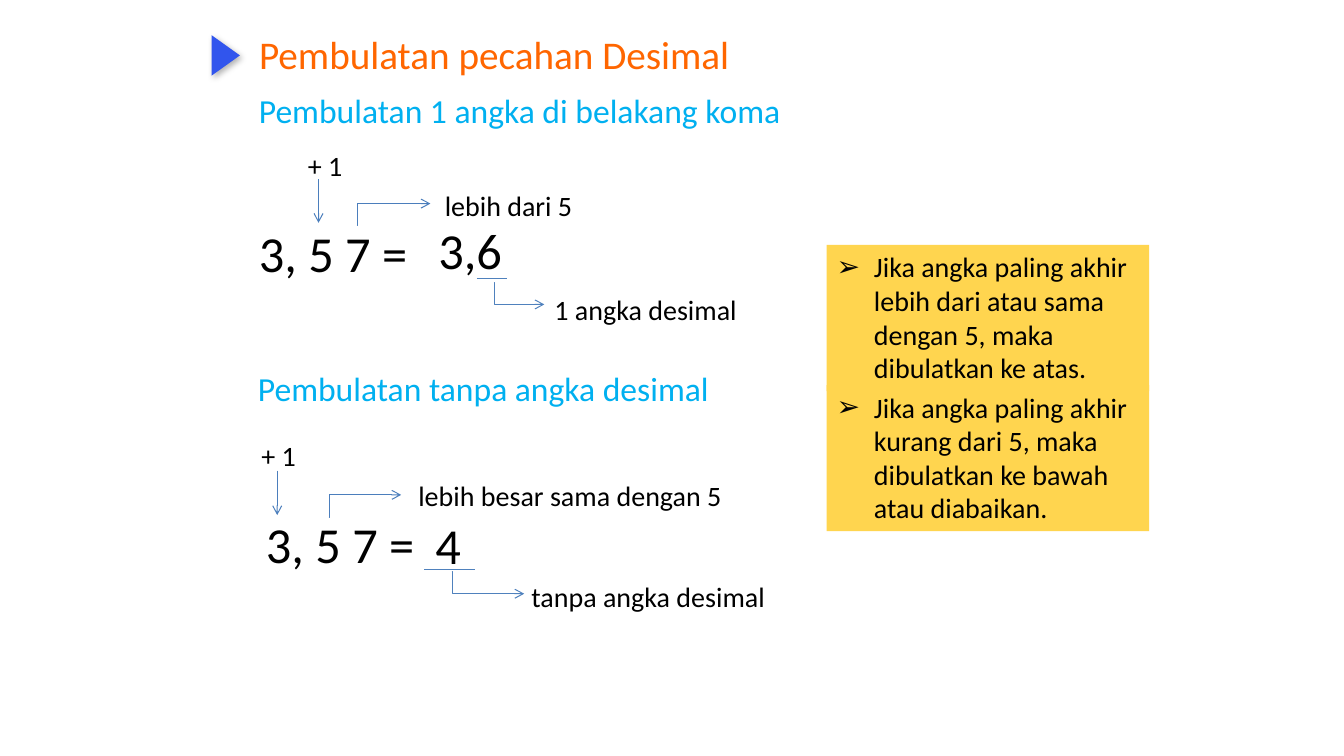
from dataclasses import dataclass
from lxml import etree
from pptx import Presentation
from pptx import util as u
from pptx.dml.color import RGBColor
from pptx.enum import shapes, text
from pptx.oxml.ns import qn

# Grid: ten columns and ten rows to the inch
CELL = 0.1
BLACK, SKY, BLUE, STEEL = "000000", "00B0F0", "4B7EBC", "4F81BD"
LEFT, MID = text.PP_ALIGN.LEFT, text.PP_ALIGN.CENTER


@dataclass
class Label:
    words: str
    box: tuple
    size: int = 20
    color: str = BLACK
    align: text.PP_ALIGN = MID
    anchor: text.MSO_ANCHOR = text.MSO_ANCHOR.MIDDLE


@dataclass
class Line:
    start: tuple
    end: tuple
    color: str = BLUE
    bent: bool = False
    arrow: bool = True


def grid(n: float) -> int:
    return u.Inches(n * CELL)


def rgb(code: str) -> RGBColor:
    return RGBColor.from_string(code)


def place(shape, box: tuple) -> None:
    shape.left, shape.top, shape.width, shape.height = map(grid, box)


def write(shape, label: Label):
    """Put the label's text in a shape and return its paragraph."""
    frame = shape.text_frame
    frame.word_wrap = True
    frame.auto_size = text.MSO_AUTO_SIZE.NONE
    frame.vertical_anchor = label.anchor
    frame.text = label.words
    para = frame.paragraphs[0]
    para.alignment = label.align
    para.space_before = u.Pt(0)
    return para


def style(para, label: Label) -> None:
    para.font.name = "Calibri"
    para.font.size = u.Pt(label.size)
    para.font.color.rgb = rgb(label.color)


def add_label(slide, label: Label) -> None:
    box = slide.shapes.add_textbox(*map(grid, label.box))
    style(write(box, label), label)


def add_rule(hold, label: Label) -> None:
    place(hold, label.box)
    hold.fill.solid()
    hold.fill.fore_color.rgb = rgb("FFD54F")
    para = write(hold, label)
    props = para._p.get_or_add_pPr()
    props.set("marL", str(grid(3.7)))
    props.set("indent", str(grid(-3.7)))
    etree.SubElement(props, qn("a:buChar"), char="➢")
    style(para, label)


def add_line(slide, line: Line) -> None:
    kind = shapes.MSO_CONNECTOR
    wire = slide.shapes.add_connector(
        kind.ELBOW if line.bent else kind.STRAIGHT,
        *map(grid, line.start + line.end))
    wire.line.color.rgb = rgb(line.color)
    wire.line.width = u.Pt(0.75)
    props = wire._element.spPr
    if line.arrow:
        etree.SubElement(props.find(qn("a:ln")), qn("a:tailEnd"), type="arrow")
    if line.bent:
        etree.SubElement(props.find(".//" + qn("a:avLst")), qn("a:gd"),
                         name="adj1", fmla="val 1000")
    etree.SubElement(props, qn("a:effectLst"))


def add_marker(slide) -> None:
    mark = slide.shapes.add_shape(shapes.MSO_SHAPE.ISOSCELES_TRIANGLE,
                                  *map(grid, (20.4, 4.1, 4, 2.8)))
    mark.rotation = 90
    mark.fill.solid()
    mark.fill.fore_color.rgb = rgb("3155ED")
    mark.line.fill.background()
    mark.shadow.inherit = False
    # Soft shadow to the lower right
    shade = etree.SubElement(
        mark._element.spPr.find(qn("a:effectLst")), qn("a:outerShdw"),
        blurRad=str(u.Pt(4.5)), dist=str(u.Pt(2.6)),
        dir=str(53 * 60000), rotWithShape="0")
    tint = etree.SubElement(shade, qn("a:srgbClr"), val=BLACK)
    etree.SubElement(tint, qn("a:alpha"), val="30000")


TOP = text.MSO_ANCHOR.TOP
TITLE = Label("Pembulatan pecahan Desimal", (24.7, 1.8, 88.3, 7.6),
              28, "FF6600", LEFT)

RULES = [
    Label("Jika angka paling akhir lebih dari atau sama dengan 5, "
          "maka dibulatkan ke atas.", (82, 24.3, 32, 14.5),
          align=LEFT, anchor=TOP),
    Label("Jika angka paling akhir kurang dari 5, maka dibulatkan "
          "ke bawah atau diabaikan.", (82, 38.2, 32, 14.5),
          align=LEFT, anchor=TOP),
]

LABELS = [
    # One decimal digit
    Label("Pembulatan 1 angka di belakang koma", (24.7, 8.4, 55.6, 5),
          24, SKY, LEFT, TOP),
    Label("3, 5 7 =", (24.7, 20.4, 33.7, 9.2), 36, align=LEFT),
    Label("3,6", (42.5, 20.1, 9.4, 9.2), 36, align=LEFT),
    Label("+ 1", (28.3, 13.4, 7.9, 6)),
    Label("lebih dari 5", (40.9, 17.4, 19.1, 6)),
    Label("1 angka desimal", (52.1, 27.7, 23.9, 6)),
    # No decimal digits
    Label("Pembulatan tanpa angka desimal", (24.6, 36, 49.1, 5),
          24, SKY, LEFT, TOP),
    Label("3, 5 7 =", (25.4, 49.3, 22.6, 9.2), 36, align=LEFT),
    Label("4", (42.2, 49.4, 6.1, 9.2), 36, align=LEFT),
    Label("+ 1", (23.7, 42.2, 7.9, 6)),
    Label("lebih besar sama dengan 5", (37.4, 46.1, 38.3, 6)),
    Label("tanpa angka desimal", (50.9, 56.2, 26.8, 6)),
]

LINES = [
    # One decimal digit
    Line((31.6, 17.8), (31.6, 22.1)),
    Line((35.4, 22.4), (42.7, 20.2), bent=True),
    Line((47.3, 27.6), (50.3, 27.6), STEEL, arrow=False),
    Line((49, 28), (54, 30.2), STEEL, bent=True),
    # No decimal digits
    Line((27.5, 46.7), (27.5, 51.1)),
    Line((32.6, 51.3), (39.8, 49.1), bent=True),
    Line((42.1, 56.5), (47.1, 56.5), STEEL, arrow=False),
    Line((44.8, 56.7), (52, 58.9), STEEL, bent=True),
]


def main() -> None:
    deck = Presentation()
    deck.slide_width, deck.slide_height = grid(133.33), grid(75)
    slide = deck.slides.add_slide(deck.slide_layouts[3])

    # Title and rule lists sit in the layout's placeholders
    title, *holds = slide.placeholders
    place(title, TITLE.box)
    para = write(title, TITLE)
    para.line_spacing = 0.9
    style(para, TITLE)
    for hold, rule in zip(holds, RULES):
        add_rule(hold, rule)

    # Worked examples
    add_marker(slide)
    for label in LABELS:
        add_label(slide, label)
    for line in LINES:
        add_line(slide, line)
    deck.save("out.pptx")


if __name__ == "__main__":
    main()
